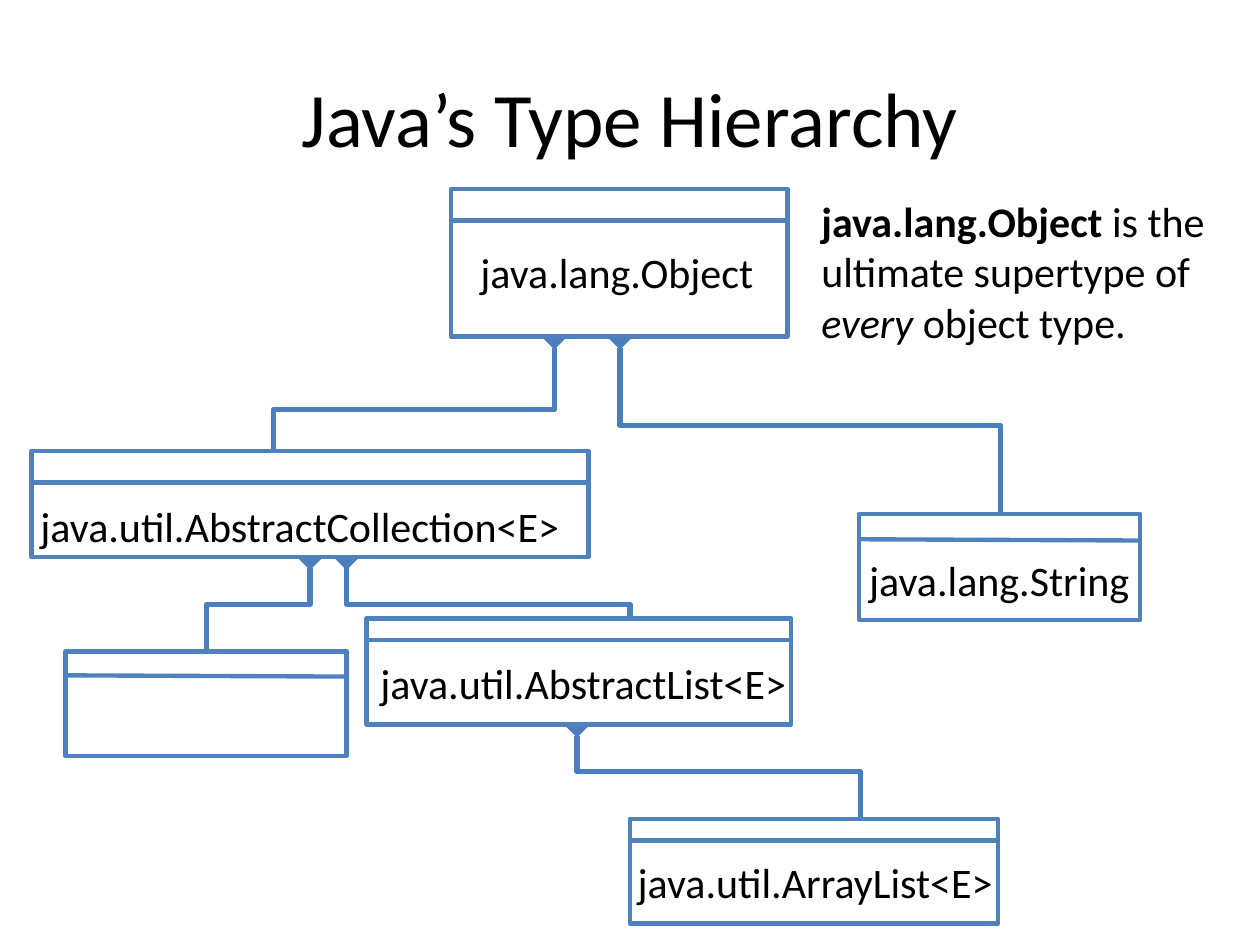
from dataclasses import dataclass

from lxml.etree import SubElement
from pptx import Presentation
from pptx.dml.color import RGBColor
from pptx.enum.shapes import MSO_CONNECTOR, MSO_SHAPE
from pptx.enum.text import MSO_ANCHOR, PP_ALIGN
from pptx.oxml.ns import qn
from pptx.util import Inches, Pt


@dataclass(frozen=True)
class Theme:
    """Colours, font and sizes of the slide."""
    ink: RGBColor = RGBColor(0, 0, 0)
    paper: RGBColor = RGBColor(255, 255, 255)
    outline: RGBColor = RGBColor(0x4F, 0x81, 0xBD)
    link: RGBColor = RGBColor(0x4B, 0x7E, 0xBC)
    font: str = "Calibri"
    title_size: int = 44
    body_size: int = 24
    outline_width: float = 2.5
    link_width: float = 3


theme = Theme()
deck = Presentation()
deck.slide_width, deck.slide_height = Inches(10), Inches(7.5)
page = deck.slides.add_slide(deck.slide_layouts[6])


def add_line(kind, start, end, color, width):
    """Add a shadowless connector between two points in inches."""
    line = page.shapes.add_connector(kind, *(Inches(v) for v in (*start, *end)))
    line.line.color.rgb = color
    line.line.width = Pt(width)
    SubElement(line._element.spPr, qn("a:effectLst"))
    return line


def add_text(place, paragraphs, size, align=PP_ALIGN.CENTER, wrap=False):
    """Add a text box; each paragraph is a list of (text, bold, italic)."""
    box = page.shapes.add_textbox(*(Inches(v) for v in place))
    frame = box.text_frame
    frame.word_wrap = wrap
    for index, spans in enumerate(paragraphs):
        paragraph = frame.paragraphs[0] if index == 0 else frame.add_paragraph()
        paragraph.alignment = align
        for text, bold, italic in spans:
            span = paragraph.add_run()
            span.text = text
            span.font.name, span.font.size = theme.font, Pt(size)
            span.font.bold, span.font.italic = bold, italic
            span.font.color.rgb = theme.ink
    return box


# Links rise from the top of a subtype to the bottom of its supertype.
links = [
    ((2.17, 3.83), (4.4, 2.67)),
    ((6.83, 6.5), (4.58, 5.75)),
    ((1.64, 5.17), (2.46, 4.42)),
    ((5, 5.17), (2.75, 4.42)),
    ((7.94, 4.08), (4.92, 2.67)),
]
for (child_x, child_y), (parent_x, parent_y) in links:
    rise, run = child_y - parent_y, abs(parent_x - child_x)
    left = (child_x + parent_x - rise) / 2
    top = (child_y + parent_y - run) / 2
    link = add_line(MSO_CONNECTOR.ELBOW, (left, top), (left + rise, top + run),
                    theme.link, theme.link_width)
    # An elbow leaves sideways, so a quarter turn makes it leave upwards.
    to_right = parent_x > child_x
    frame = link._element.spPr.find(qn("a:xfrm"))
    frame.set("rot", str((90 if to_right else 270) * 60000))
    frame.set("flipV", "1")
    if to_right:
        frame.set("flipH", "1")
    SubElement(link.line._get_or_add_ln(), qn("a:tailEnd"),
               type="diamond", w="lg", len="lg")

title = add_text((0.5, 0.3, 9, 1.25), [[("Java’s Type Hierarchy", False, False)]],
                 theme.title_size, wrap=True)
title.text_frame.vertical_anchor = MSO_ANCHOR.MIDDLE

# name, box, filled, divider start and end, label place
types = [
    ("java.util.AbstractCollection<E>", (0.25, 3.58, 4.42, 0.84), True,
     (0.25, 3.83), (4.67, 3.83), (0.13, 3.92, 4.5, 0.5)),
    ("java.lang.Object", (3.58, 1.5, 2.67, 1.17), True,
     (3.58, 1.75), (6.25, 1.75), (3.59, 1.91, 2.61, 0.5)),
    ("java.lang.String", (6.82, 4.08, 2.23, 0.84), False,
     (6.82, 4.28), (9.05, 4.29), (6.79, 4.35, 2.28, 0.5)),
    (None, (0.52, 5.17, 2.23, 0.83), False,
     (0.52, 5.36), (2.75, 5.37), None),
    ("java.util.AbstractList<E>", (2.91, 4.91, 3.37, 0.84), True,
     (2.91, 5.08), (6.28, 5.08), (2.83, 5.17, 3.6, 0.5)),
    ("java.util.ArrayList<E>", (5, 6.5, 2.92, 0.83), False,
     (5, 6.67), (7.92, 6.67), (4.87, 6.75, 3.2, 0.5)),
]
for name, place, filled, start, end, label_place in types:
    box = page.shapes.add_shape(MSO_SHAPE.RECTANGLE, *(Inches(v) for v in place))
    box.shadow.inherit = False
    if filled:
        box.fill.solid()
        box.fill.fore_color.rgb = theme.paper
    else:
        box.fill.background()
    box.line.color.rgb = theme.outline
    box.line.width = Pt(theme.outline_width)
    add_line(MSO_CONNECTOR.STRAIGHT, start, end, theme.outline, theme.outline_width)
    if name:
        add_text(label_place, [[(name, False, False)]], theme.body_size)

add_text((6.42, 1.5, 3.25, 1.31), [
    [("java.lang.Object ", True, False), ("is the ultimate supertype of", False, False)],
    [("every", False, True), (" object type.", False, False)],
], theme.body_size, PP_ALIGN.LEFT, wrap=True)

deck.save("out.pptx")
